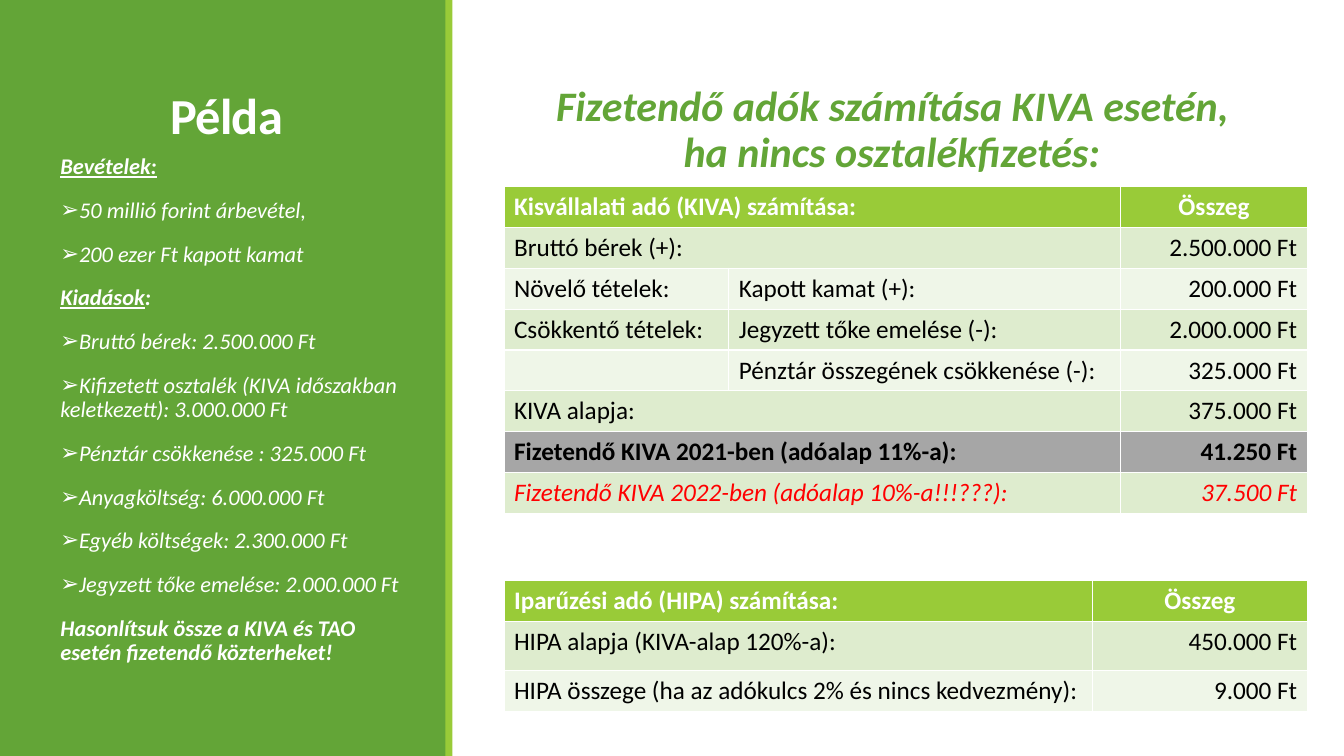
from dataclasses import dataclass, field

from lxml import etree
from pptx import Presentation
from pptx import util as u
from pptx.dml.color import RGBColor
from pptx.enum import shapes, text
from pptx.oxml import ns

HUES = {
    "green": "63A537", "lime": "99CB38", "white": "FFFFFF", "black": "000000",
    "red": "FF0000", "gray": "A6A6A6", "pale": "DEECCE", "faint": "EFF6E8",
}
FONT = "Calibri"
ROW = 29.16
LEFT, MID, RIGHT = text.PP_ALIGN.LEFT, text.PP_ALIGN.CENTER, text.PP_ALIGN.RIGHT


@dataclass
class Box:
    x: float
    y: float
    w: float
    h: float

    def args(self) -> list:
        return [u.Pt(n) for n in (self.x, self.y, self.w, self.h)]


@dataclass
class Line:
    runs: list
    mark: str = ""


@dataclass
class Row:
    cells: list
    fill: str
    high: float = ROW
    style: dict = field(default_factory=dict)


@dataclass
class Grid:
    box: Box
    cols: list
    rows: list


def hue(name: str) -> RGBColor:
    return RGBColor.from_string(HUES[name])


def write(par, words: str, size: float = 18, color: str = "black", bold: bool = False,
          slant: bool = False, under: bool = False, track: int = 0) -> None:
    run = par.add_run()
    run.text = words
    font = run.font
    font.name, font.size = FONT, u.Pt(size)
    font.bold, font.italic, font.underline = bold, slant, under
    font.color.rgb = hue(color)
    if track:
        font._element.set("spc", str(track))


def space(par, lead: float, top: float, end: float, align=LEFT) -> None:
    par.line_spacing, par.alignment = lead, align
    par.space_before, par.space_after = u.Pt(top), u.Pt(end)


def bullet(par, mark: str, color: str, hang: float = 0) -> None:
    props = par._p.get_or_add_pPr()
    props.set("marL", str(u.Pt(hang)))
    props.set("indent", str(-u.Pt(hang)))
    if not mark:
        etree.SubElement(props, ns.qn("a:buNone"))
        return
    tint = etree.SubElement(props, ns.qn("a:buClr"))
    etree.SubElement(tint, ns.qn("a:srgbClr")).set("val", HUES[color])
    etree.SubElement(props, ns.qn("a:buChar")).set("char", mark)


def place(holder, box: Box, anchor):
    holder.left, holder.top, holder.width, holder.height = box.args()
    frame = holder.text_frame
    frame.word_wrap, frame.auto_size = True, text.MSO_AUTO_SIZE.NONE
    frame.vertical_anchor = anchor
    return frame


def panel(slide, box: Box, color: str) -> None:
    shape = slide.shapes.add_shape(shapes.MSO_SHAPE.RECTANGLE, *box.args())
    shape.shadow.inherit = False
    shape.fill.solid()
    shape.fill.fore_color.rgb = hue(color)
    shape.line.fill.background()
    slide.shapes.title._element.addprevious(shape._element)


def draw(slide, grid: Grid) -> None:
    last = len(grid.cols) - 1
    table = slide.shapes.add_table(len(grid.rows), last + 1, *grid.box.args()).table
    for col, wide in zip(table.columns, grid.cols):
        col.width = u.Pt(wide)
    for i, row in enumerate(grid.rows):
        table.rows[i].height = u.Pt(row.high)
        for j in range(last + 1):
            cell = table.cell(i, j)
            cell.fill.solid()
            cell.fill.fore_color.rgb = hue(row.fill)
        # A row one entry short spans its first two columns
        if len(row.cells) == last:
            table.cell(i, 0).merge(table.cell(i, 1))
        spots = [*range(len(row.cells) - 1), last]
        for j, words in zip(spots, row.cells):
            par = table.cell(i, j).text_frame.paragraphs[0]
            par.alignment = LEFT if j < last else RIGHT if i else MID
            if words:
                write(par, words, **row.style)


HEAD = {"color": "white", "bold": True}
TOPIC = {"bold": True, "under": True}
ARROW = "➢"

NOTES = [
    Line([("Bevételek:", TOPIC)]),
    Line([("50 millió forint árbevétel,", {})], ARROW),
    Line([("200 ezer Ft kapott kamat", {})], ARROW),
    Line([("Kiadások", TOPIC), (":", {"bold": True})]),
    Line([("Bruttó bérek: 2.500.000 Ft", {})], ARROW),
    Line([("Kifizetett osztalék (KIVA időszakban keletkezett): 3.000.000 Ft", {})], ARROW),
    Line([("Pénztár csökkenése : 325.000 Ft", {})], ARROW),
    Line([("Anyagköltség: 6.000.000 Ft", {})], ARROW),
    Line([("Egyéb költségek: 2.300.000 Ft", {})], ARROW),
    Line([("Jegyzett tőke emelése: 2.000.000 Ft", {})], ARROW),
    Line([("Hasonlítsuk össze a KIVA és TAO esetén fizetendő közterheket!", {"bold": True})]),
]

GRIDS = [
    Grid(Box(360, 414.7, 573.8, 93), [420.4, 153.4], [
        Row(["Iparűzési adó (HIPA) számítása:", "Összeg"], "lime", style=HEAD),
        Row(["HIPA alapja (KIVA-alap 120%-a):", "450.000 Ft"], "pale", 35),
        Row(["HIPA összege (ha az adókulcs 2% és nincs kedvezmény):", "9.000 Ft"], "faint"),
    ]),
    Grid(Box(360, 133.2, 573.8, 8 * ROW), [160.6, 280, 133.2], [
        Row(["Kisvállalati adó (KIVA) számítása:", "Összeg"], "lime", style=HEAD),
        Row(["Bruttó bérek (+):", "2.500.000 Ft"], "pale"),
        Row(["Növelő tételek:", "Kapott kamat (+):", "200.000 Ft"], "faint"),
        Row(["Csökkentő tételek:", "Jegyzett tőke emelése (-):", "2.000.000 Ft"], "pale"),
        Row(["", "Pénztár összegének csökkenése (-):", "325.000 Ft"], "faint"),
        Row(["KIVA alapja:", "375.000 Ft"], "pale"),
        Row(["Fizetendő KIVA 2021-ben (adóalap 11%-a):", "41.250 Ft"], "gray",
            style={"bold": True}),
        Row(["Fizetendő KIVA 2022-ben (adóalap 10%-a!!!???):", "37.500 Ft"], "pale",
            style={"color": "red", "slant": True}),
    ]),
]


def main() -> None:
    deck = Presentation()
    deck.slide_width, deck.slide_height = u.Pt(960), u.Pt(540)
    slide = deck.slides.add_slide(deck.slide_layouts[3])
    title, lead, notes = slide.placeholders

    # Side panel and its edge
    panel(slide, Box(0, 0, 319, 540), "green")
    panel(slide, Box(318.2, 0, 5, 540), "lime")

    # Title
    frame = place(title, Box(36, 46.8, 252, 60.5), text.MSO_ANCHOR.BOTTOM)
    par = frame.paragraphs[0]
    space(par, 0.85, 0, 0, MID)
    write(par, "Példa", size=36, color="white", bold=True, track=-50)

    # Heading above the tables
    frame = place(lead, Box(378, 57.6, 511.2, 414), text.MSO_ANCHOR.TOP)
    frame.margin_left = frame.margin_right = 0
    par = frame.paragraphs[0]
    space(par, 0.9, 12, 2, MID)
    bullet(par, " ", "lime", 7.2)
    write(par, "Fizetendő adók számítása KIVA esetén, ha nincs osztalékfizetés:",
          size=30, color="green", bold=True, slant=True)

    # Income and cost list
    frame = place(notes, Box(36, 107.3, 258.5, 388.8), text.MSO_ANCHOR.TOP)
    for i, line in enumerate(NOTES):
        par = frame.add_paragraph() if i else frame.paragraphs[0]
        space(par, 0.9, 12, 2)
        bullet(par, line.mark, "white")
        for words, style in line.runs:
            write(par, words, size=16, color="white", slant=True, **style)

    # Tax tables
    for grid in GRIDS:
        draw(slide, grid)

    deck.save("out.pptx")


if __name__ == "__main__":
    main()
